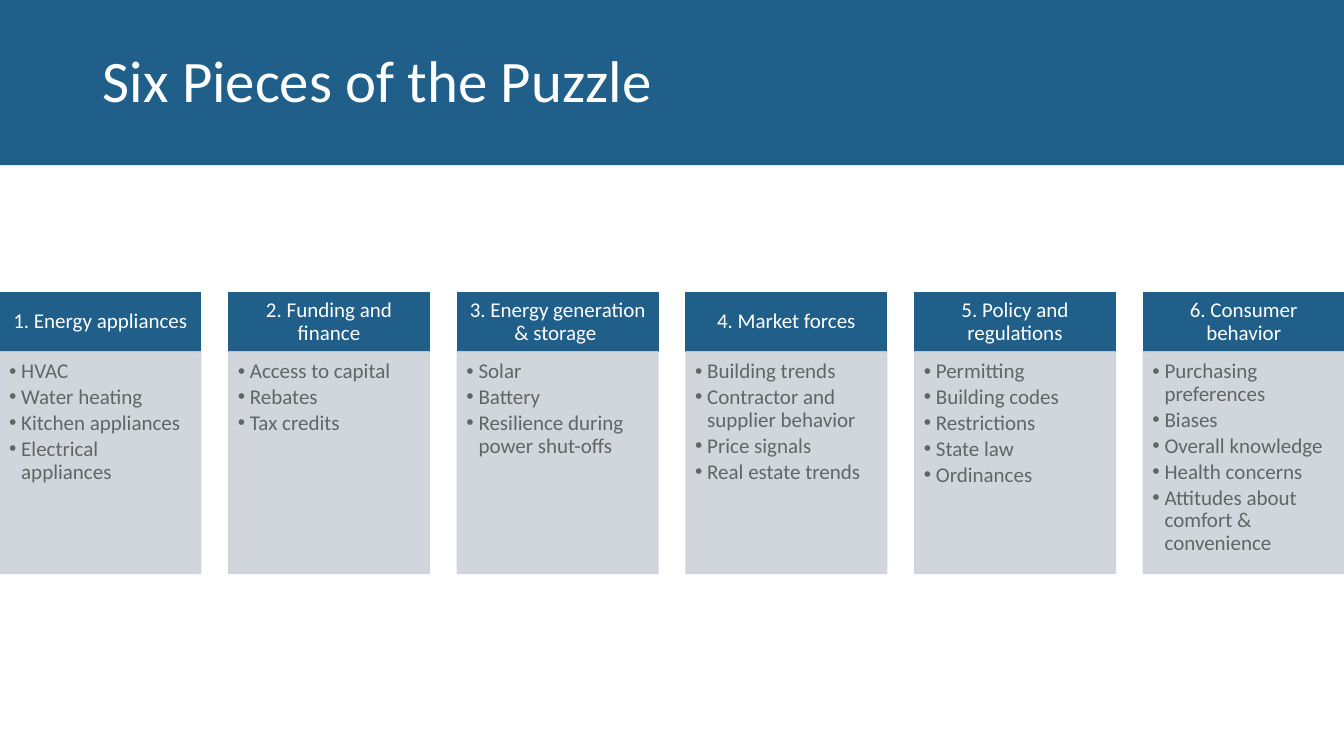
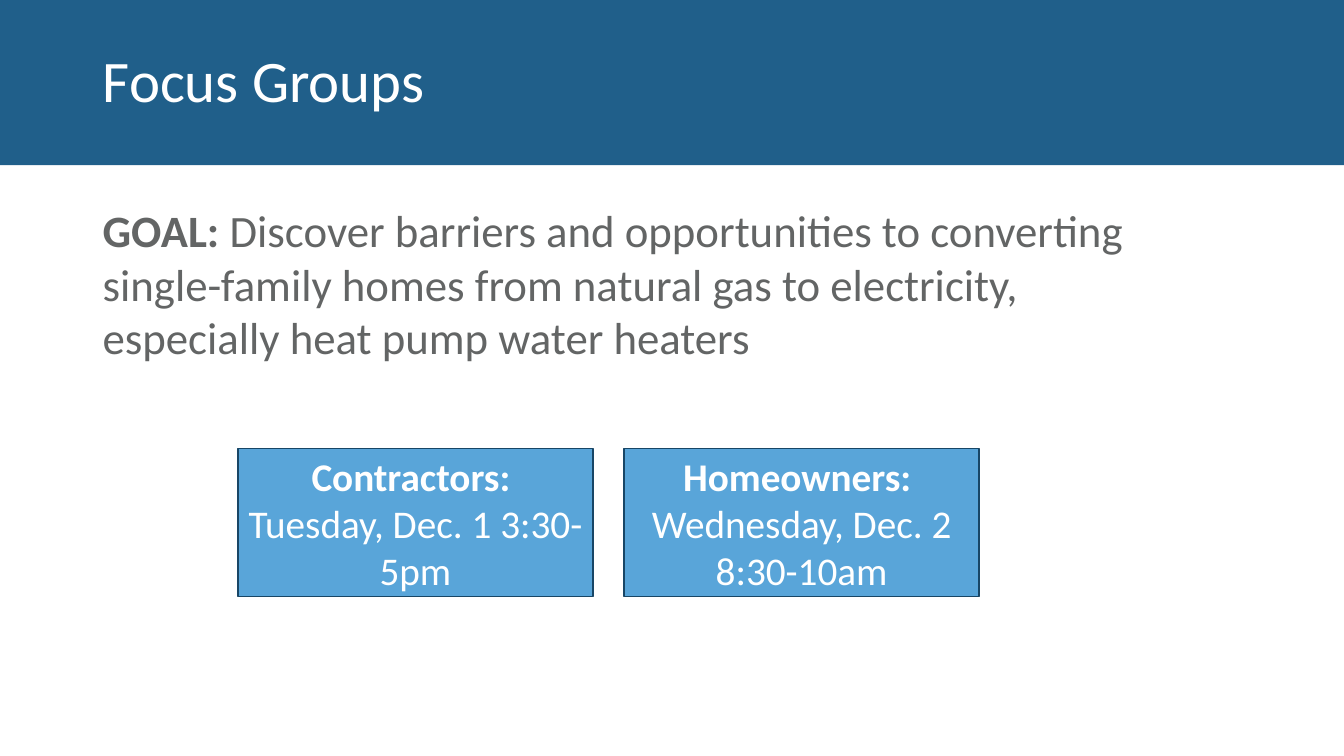
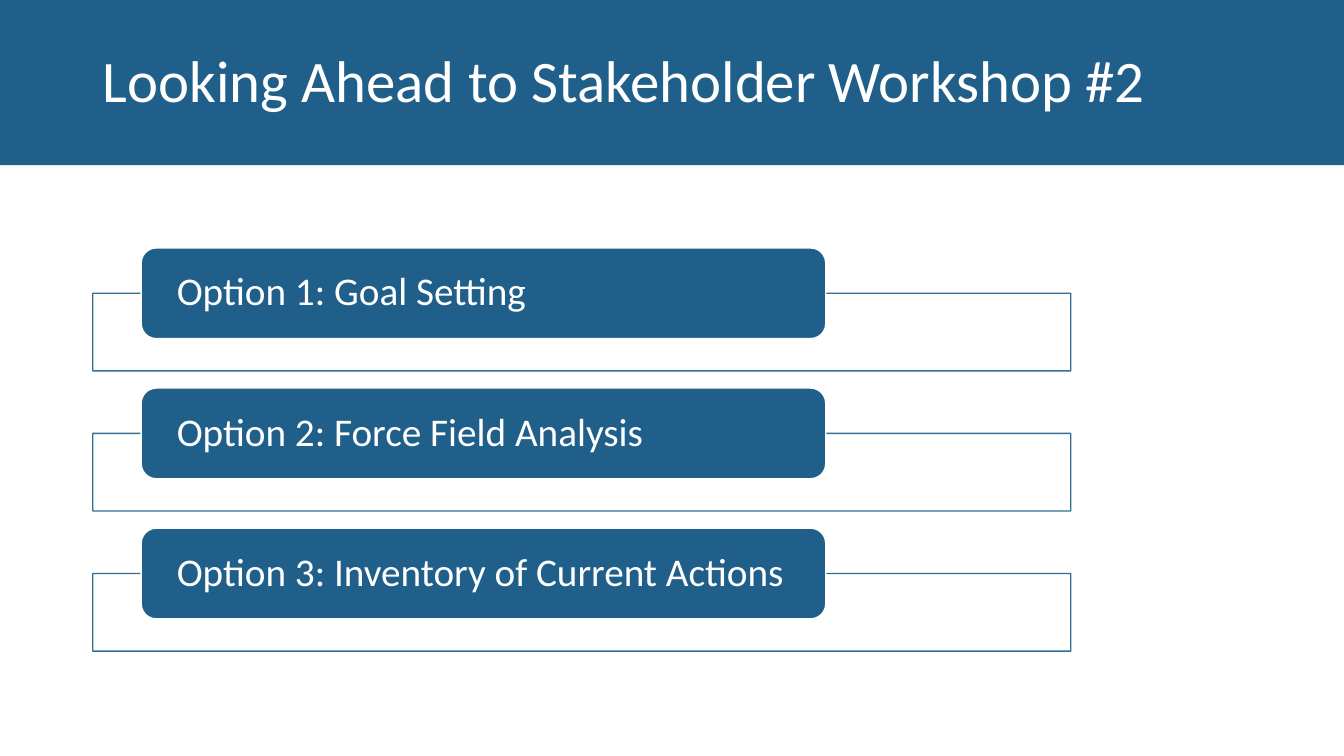
from lxml import etree
from pptx import Presentation, util as u
from pptx.dml.color import RGBColor
from pptx.enum import shapes, text
from pptx.oxml.ns import qn

# Shared look
FONT = "Calibri"
NAVY = RGBColor(0x20, 0x5F, 0x8A)
DARK_NAVY = RGBColor(0x18, 0x46, 0x66)
SKY = RGBColor(0x59, 0xA5, 0xD9)
MIST = RGBColor(0xCD, 0xD2, 0xDA)
GRAY = RGBColor(0x63, 0x65, 0x65)
WHITE = RGBColor(0xFF, 0xFF, 0xFF)

# Shared measures, in inches
SLIDE_WIDTH, SLIDE_HEIGHT = 13.33, 7.5
BAND_HEIGHT = 1.64
MARGIN = 0.92
INSETS = (0.1, 0.05, 0.1, 0.05)

RECTANGLE = shapes.MSO_SHAPE.RECTANGLE
ROUNDED = shapes.MSO_SHAPE.ROUNDED_RECTANGLE
LEFT, CENTER = text.PP_ALIGN.LEFT, text.PP_ALIGN.CENTER
TOP, MIDDLE = text.MSO_ANCHOR.TOP, text.MSO_ANCHOR.MIDDLE

PIECES = [
    ("1. Energy appliances",
     ["HVAC", "Water heating", "Kitchen appliances", "Electrical appliances"]),
    ("2. Funding and finance",
     ["Access to capital", "Rebates", "Tax credits"]),
    ("3. Energy generation & storage ",
     ["Solar", "Battery", "Resilience during power shut-offs"]),
    ("4. Market forces",
     ["Building trends", "Contractor and supplier behavior", "Price signals",
      "Real estate trends"]),
    ("5. Policy and regulations",
     ["Permitting", "Building codes", "Restrictions", "State law", "Ordinances"]),
    ("6. Consumer behavior",
     ["Purchasing preferences", "Biases", "Overall knowledge", "Health concerns",
      "Attitudes about comfort & convenience"]),
]
GOAL = ("Discover barriers and opportunities to converting single-family homes "
        "from natural gas to electricity, especially heat pump water heaters")
SESSIONS = [
    ("Contractors: ", "Tuesday, Dec. 1 3:30-5pm"),
    ("Homeowners: ", "Wednesday, Dec. 2 8:30-10am"),
]
OPTIONS = [
    "Option 1: Goal Setting",
    "Option 2: Force Field Analysis",
    "Option 3: Inventory of Current Actions",
]


def place(shape, left, top, width, height):
    shape.left, shape.top = u.Inches(left), u.Inches(top)
    shape.width, shape.height = u.Inches(width), u.Inches(height)


def add_box(slide, kind, area, fill, line, opacity=None):
    """Add a filled, outlined shape; opacity is a percentage."""
    shape = slide.shapes.add_shape(kind, *map(u.Inches, area))
    shape.shadow.inherit = False
    shape.fill.solid()
    shape.fill.fore_color.rgb = fill
    shape.line.color.rgb = line
    shape.line.width = u.Pt(1)
    if opacity:
        for color in shape.element.spPr.iter(qn("a:srgbClr")):
            etree.SubElement(color, qn("a:alpha"), val=str(opacity * 1000))
    return shape


def add_bullet(paragraph, indent):
    properties = paragraph._p.get_or_add_pPr()
    properties.set("marL", str(u.Inches(indent)))
    properties.set("indent", str(-u.Inches(indent)))
    etree.SubElement(properties, qn("a:buFont"), typeface="Arial")
    etree.SubElement(properties, qn("a:buChar"), char="•")


def write(shape, paragraphs, size, color, align=LEFT, anchor=MIDDLE,
          insets=INSETS, spacing=None, after=0, bullet_indent=None):
    """Fill a shape with paragraphs, each a list of (text, bold) runs."""
    frame = shape.text_frame
    frame.word_wrap = True
    frame.auto_size = text.MSO_AUTO_SIZE.NONE
    frame.vertical_anchor = anchor
    (frame.margin_left, frame.margin_top,
     frame.margin_right, frame.margin_bottom) = map(u.Inches, insets)
    for index, runs in enumerate(paragraphs):
        paragraph = frame.add_paragraph() if index else frame.paragraphs[0]
        if bullet_indent:
            add_bullet(paragraph, bullet_indent)
        paragraph.alignment = align
        paragraph.line_spacing = spacing
        paragraph.space_after = u.Pt(after)
        for words, bold in runs:
            run = paragraph.add_run()
            run.text = words
            run.font.name, run.font.size = FONT, u.Pt(size)
            run.font.bold = bold
            run.font.color.rgb = color


def add_titled_slide(presentation, title):
    slide = presentation.slides.add_slide(presentation.slide_layouts.get_by_name("Title Only"))
    place(slide.shapes.title, MARGIN, 0.31, 0.8 * SLIDE_WIDTH, 1.03)
    write(slide.shapes.title, [[(title, False)]], 42, WHITE, spacing=0.9)
    return slide


def move_band_to_layout(slide):
    """Draw the title band and hand it to the layout, behind everything else."""
    band = add_box(slide, RECTANGLE, (0, 0, SLIDE_WIDTH, BAND_HEIGHT), NAVY, NAVY)
    band.line.fill.background()
    slide.slide_layout.shapes.element.insert(2, band.element)


def add_pieces(slide):
    width, top, header_height, list_height = 1.99, 2.9, 0.59, 2.2
    pitch = (SLIDE_WIDTH - width) / (len(PIECES) - 1)
    for column, (heading, items) in enumerate(PIECES):
        left = column * pitch
        header = add_box(slide, RECTANGLE, (left, top, width, header_height), NAVY, NAVY)
        write(header, [[(heading, False)]], 15, WHITE, CENTER,
              insets=(0.12, 0.07, 0.12, 0.07), spacing=0.9)
        panel = add_box(slide, RECTANGLE, (left, top + header_height, width, list_height),
                        MIST, MIST, opacity=90)
        write(panel, [[(item, False)] for item in items], 15, GRAY, anchor=TOP,
              insets=(0.09, 0.09, 0.12, 0.13), spacing=0.9, after=2.25,
              bullet_indent=0.12)


def add_focus_groups(slide):
    goal = slide.shapes.add_textbox(*map(u.Inches, (MARGIN, 1.96, 11.06, 2.12)))
    write(goal, [[("GOAL: ", True), (GOAL, False)]], 32, GRAY, anchor=TOP)
    width, gap = 3.52, 0.31
    for column, (group, time) in enumerate(SESSIONS):
        area = (2.36 + column * (width + gap), 4.45, width, 1.47)
        session = add_box(slide, RECTANGLE, area, SKY, DARK_NAVY)
        write(session, [[(group, True)], [(time, False)]], 28, WHITE, CENTER)


def add_options(slide):
    top, pitch, label_height = 2.46, 1.39, 0.9
    for row, option in enumerate(OPTIONS):
        label_top = top + row * pitch
        add_box(slide, RECTANGLE, (MARGIN, label_top + label_height / 2, 9.7, 0.77),
                WHITE, NAVY, opacity=90)
        label = add_box(slide, ROUNDED, (1.4, label_top, 6.79, label_height), NAVY, WHITE)
        write(label, [[(option, False)]], 28, WHITE,
              insets=(0.31, 0.04, 0.31, 0.04), spacing=0.9)


def main():
    presentation = Presentation()
    presentation.slide_width = u.Inches(SLIDE_WIDTH)
    presentation.slide_height = u.Inches(SLIDE_HEIGHT)

    # Six columns of topics
    pieces = add_titled_slide(presentation, "Six Pieces of the Puzzle")
    move_band_to_layout(pieces)
    add_pieces(pieces)

    # Goal and two sessions
    add_focus_groups(add_titled_slide(presentation, "Focus Groups"))

    # Three options
    add_options(add_titled_slide(presentation, "Looking Ahead to Stakeholder Workshop #2"))

    presentation.save("out.pptx")


if __name__ == "__main__":
    main()
